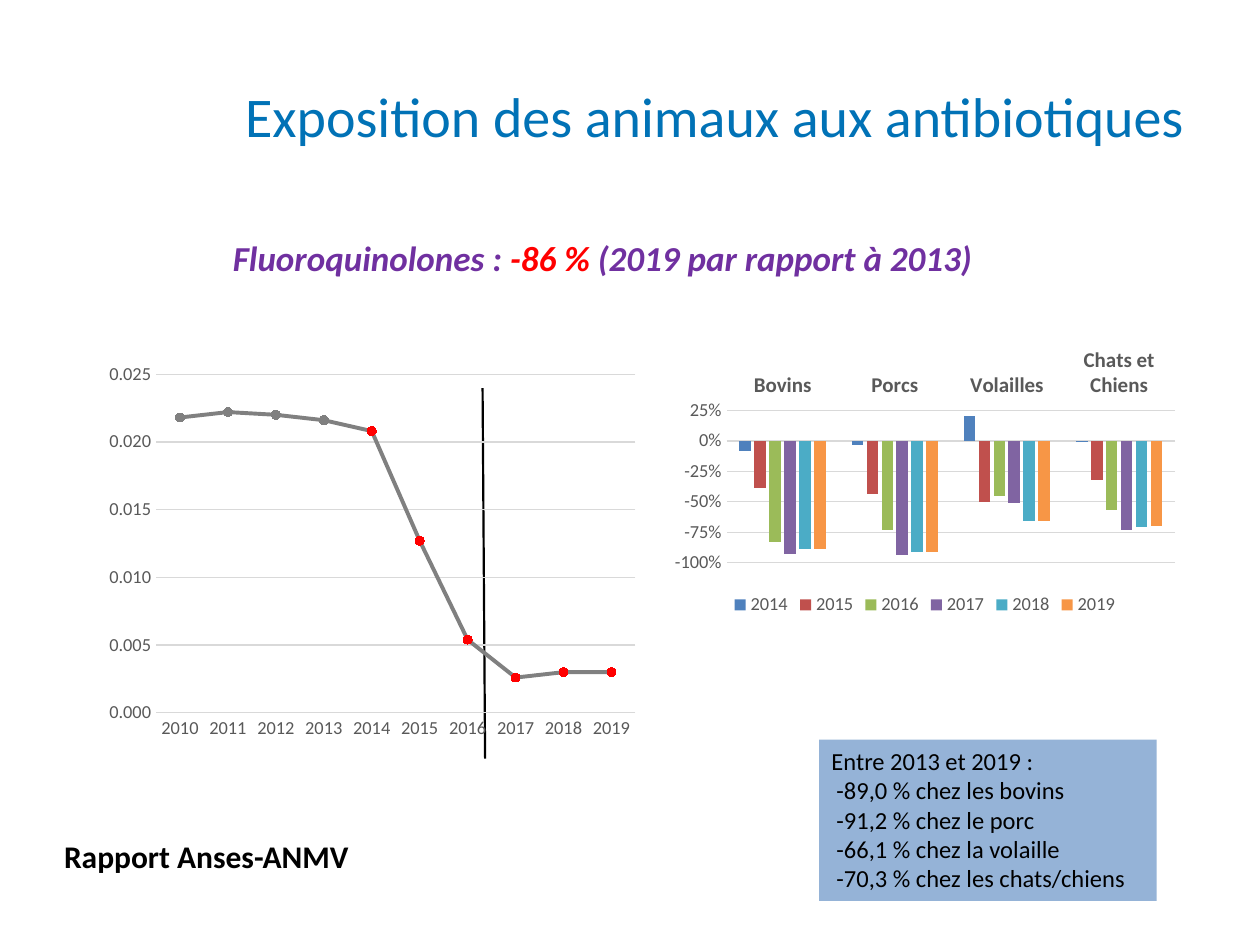
from dataclasses import dataclass
from lxml.etree import SubElement
from pptx import Presentation
from pptx.chart.data import CategoryChartData
from pptx.dml.color import RGBColor
from pptx.enum.chart import (XL_CHART_TYPE, XL_LEGEND_POSITION, XL_MARKER_STYLE,
                             XL_TICK_LABEL_POSITION, XL_TICK_MARK)
from pptx.enum.shapes import MSO_CONNECTOR, MSO_SHAPE
from pptx.enum.text import MSO_ANCHOR, PP_ALIGN
from pptx.oxml import parse_xml
from pptx.oxml.ns import nsdecls, qn
from pptx.util import Inches, Pt


@dataclass(frozen=True)
class Theme:
    """Colours, font and type sizes of the slide."""
    font: str = "Calibri"
    black: str = "000000"
    blue: str = "0172B6"
    plum: str = "7030A0"
    red: str = "FF0000"
    gray: str = "808080"
    label: str = "595959"
    rule: str = "D9D9D9"
    panel: str = "95B3D7"
    bars: tuple = ("4F81BD", "C0504D", "9BBB59", "8064A2", "4BACC6", "F79646")
    title: float = 32
    lead: float = 20
    source: float = 18
    note: float = 14
    group: float = 12
    tick: float = 10.5


def style(font, size, color, bold=False, italic=False, name=Theme.font):
    """Set the format of a font."""
    font.name, font.size = name, Pt(size)
    font.bold, font.italic = bold, italic
    font.color.rgb = RGBColor.from_string(color)


def write(par, text, **form):
    """Add a run of formatted text to a paragraph."""
    run = par.add_run()
    run.text = text
    style(run.font, **form)


def paint(fill, color):
    """Fill with one solid colour."""
    fill.solid()
    fill.fore_color.rgb = RGBColor.from_string(color)


def stroke(line, color, width):
    """Set the colour and width of a line."""
    line.color.rgb = RGBColor.from_string(color)
    line.width = Pt(width)


def indent(par, left):
    """Give a paragraph a left margin in inches."""
    props = par._p.get_or_add_pPr()
    props.set("marL", str(Inches(left)))
    props.set("indent", "0")


def frame(chart, x, y, w, h):
    """Place the inner plot area by shares of the chart."""
    area = chart._chartSpace.chart.plotArea
    for old in area.findall(qn("c:layout")):
        area.remove(old)
    parts = "".join(f'<c:{key} val="{val}"/>' for key, val in (
        ("layoutTarget", "inner"), ("xMode", "edge"), ("yMode", "edge"),
        ("x", x), ("y", y), ("w", w), ("h", h)))
    area.insert(0, parse_xml(
        f'<c:layout {nsdecls("c")}><c:manualLayout>{parts}</c:manualLayout></c:layout>'))


class Deck:
    """Hold the style and the current slide, measured in percent of its size."""

    def __init__(self, theme):
        self.theme = theme
        self.show = Presentation()
        self.show.slide_width, self.show.slide_height = Inches(10), Inches(7.5)
        self.slide = self.show.slides.add_slide(self.show.slide_layouts[6])

    def place(self, x, y):
        """Turn percents into lengths."""
        return int(self.show.slide_width * x / 100), int(self.show.slide_height * y / 100)

    def text(self, box, runs, align=PP_ALIGN.LEFT, anchor=MSO_ANCHOR.TOP):
        """Add one line of text made of formatted runs."""
        shape = self.slide.shapes.add_textbox(*self.place(*box[:2]), *self.place(*box[2:]))
        body = shape.text_frame
        body.word_wrap, body.vertical_anchor = True, anchor
        par = body.paragraphs[0]
        par.alignment = align
        for words, form in runs:
            write(par, words, **form)

    def panel(self, box, head, rows):
        """Add a filled box with a heading and indented rows."""
        shape = self.slide.shapes.add_shape(
            MSO_SHAPE.RECTANGLE, *self.place(*box[:2]), *self.place(*box[2:]))
        shape.shadow.inherit = False
        paint(shape.fill, self.theme.panel)
        shape.line.fill.background()
        body = shape.text_frame
        body.word_wrap, body.vertical_anchor = True, MSO_ANCHOR.TOP
        for i, words in enumerate([head, *rows]):
            par = body.add_paragraph() if i else body.paragraphs[0]
            par.alignment = PP_ALIGN.LEFT
            if i:
                indent(par, 0.04)
            write(par, words, size=self.theme.note, color=self.theme.black)

    def line(self, start, end):
        """Add a straight line."""
        link = self.slide.shapes.add_connector(
            MSO_CONNECTOR.STRAIGHT, *self.place(*start), *self.place(*end))
        stroke(link.line, self.theme.black, 1.25)
        SubElement(link._element.spPr, qn("a:effectLst"))

    def chart(self, kind, box, cats, series, plot, scale, form):
        """Add a chart with light grid lines and plain axes."""
        look = self.theme
        data = CategoryChartData()
        data.categories = cats
        for name, vals in series.items():
            data.add_series(name, vals)
        chart = self.slide.shapes.add_chart(
            kind, *self.place(*box[:2]), *self.place(*box[2:]), data).chart
        style(chart.font, look.tick, look.black)
        chart.has_title = chart.has_legend = False
        chart.plots[0].vary_by_categories = False
        cat, val = chart.category_axis, chart.value_axis
        for axis in (cat, val):
            axis.major_tick_mark = axis.minor_tick_mark = XL_TICK_MARK.NONE
            style(axis.tick_labels.font, look.tick, look.label)
        cat.has_major_gridlines = False
        stroke(cat.format.line, look.rule, 0.75)
        val.format.line.fill.background()
        stroke(val.major_gridlines.format.line, look.rule, 0.75)
        val.minimum_scale, val.maximum_scale, val.major_unit = scale
        val.tick_labels.number_format = form
        val.tick_labels.number_format_is_linked = False
        frame(chart, *plot)
        return chart

    def bars(self, box, cats, series):
        """Add the clustered columns with group names on top."""
        look = self.theme
        chart = self.chart(XL_CHART_TYPE.COLUMN_CLUSTERED, box, cats, series,
                           (0.12, 0.24, 0.86, 0.55), (-1, 0.25, 0.25), "0%")
        labels = chart.category_axis.tick_labels
        style(labels.font, look.group, look.label, bold=True)
        chart.category_axis.tick_label_position = XL_TICK_LABEL_POSITION.HIGH
        chart.plots[0].gap_width, chart.plots[0].overlap = 219, -27
        for row, color in zip(chart.series, look.bars):
            row.invert_if_negative = False
            paint(row.format.fill, color)
        chart.has_legend = True
        chart.legend.position = XL_LEGEND_POSITION.BOTTOM
        chart.legend.include_in_layout = False
        style(chart.legend.font, look.tick, look.label)

    def trend(self, box, cats, series, turn):
        """Add the line chart, with red markers from the turning point."""
        look = self.theme
        chart = self.chart(XL_CHART_TYPE.LINE_MARKERS, box, cats, series,
                           (0.13, 0.05, 0.84, 0.84), (0, 0.025, 0.005), "#,##0.000")
        row = chart.series[0]
        row.smooth = False
        spots = [(row, look.gray)] + [(row.points[i], look.red) for i in range(turn, len(cats))]
        for spot, color in spots:
            spot.marker.style, spot.marker.size = XL_MARKER_STYLE.CIRCLE, 5
            paint(spot.marker.format.fill, color)
            stroke(spot.marker.format.line, color, 0.75)
            stroke(spot.format.line, color, 2.25)


def main():
    """Build the slide and save it."""
    look = Theme()
    deck = Deck(look)
    deck.text((14.6, 9.87, 84.3, 4.67), [("Exposition des animaux aux antibiotiques",
              dict(size=look.title, color=look.blue))], PP_ALIGN.CENTER, MSO_ANCHOR.MIDDLE)
    lead = dict(size=look.lead, bold=True, italic=True)
    deck.text((17.5, 24.4, 82, 5.87), [
        ("Fluoroquinolones : ", dict(lead, color=look.plum)),
        ("-86 % ", dict(lead, color=look.red)),
        ("(2019 par rapport à 2013)", dict(lead, color=look.plum))])
    deck.panel((65, 78.27, 26.8, 17.07), "Entre 2013 et 2019 :", [
        "-89,0 % chez les bovins", "-91,2 % chez le porc",
        "-66,1 % chez la volaille", "-70,3 % chez les chats/chiens"])
    deck.line((38.3, 41.07), (38.5, 80.27))
    deck.bars((52.7, 36.4, 41.4, 29.33), ("Bovins", "Porcs", "Volailles", "Chats et Chiens"), {
        "2014": (-0.08, -0.03, 0.2, -0.01), "2015": (-0.39, -0.44, -0.5, -0.32),
        "2016": (-0.83, -0.73, -0.45, -0.57), "2017": (-0.93, -0.94, -0.51, -0.73),
        "2018": (-0.89, -0.91, -0.66, -0.71), "2019": (-0.89, -0.91, -0.66, -0.7)})
    deck.trend((6.5, 37.47, 45.3, 42.67), [str(year) for year in range(2010, 2020)], {
        "Series 1": (0.0218, 0.0222, 0.022, 0.0216, 0.0208,
                     0.0127, 0.0054, 0.0026, 0.003, 0.003)}, turn=4)
    deck.text((4.1, 87.87, 26.8, 5.33), [
        ("Rapport Anses-ANMV", dict(size=look.source, color=look.black, bold=True))])
    deck.show.save("out.pptx")


if __name__ == "__main__":
    main()
